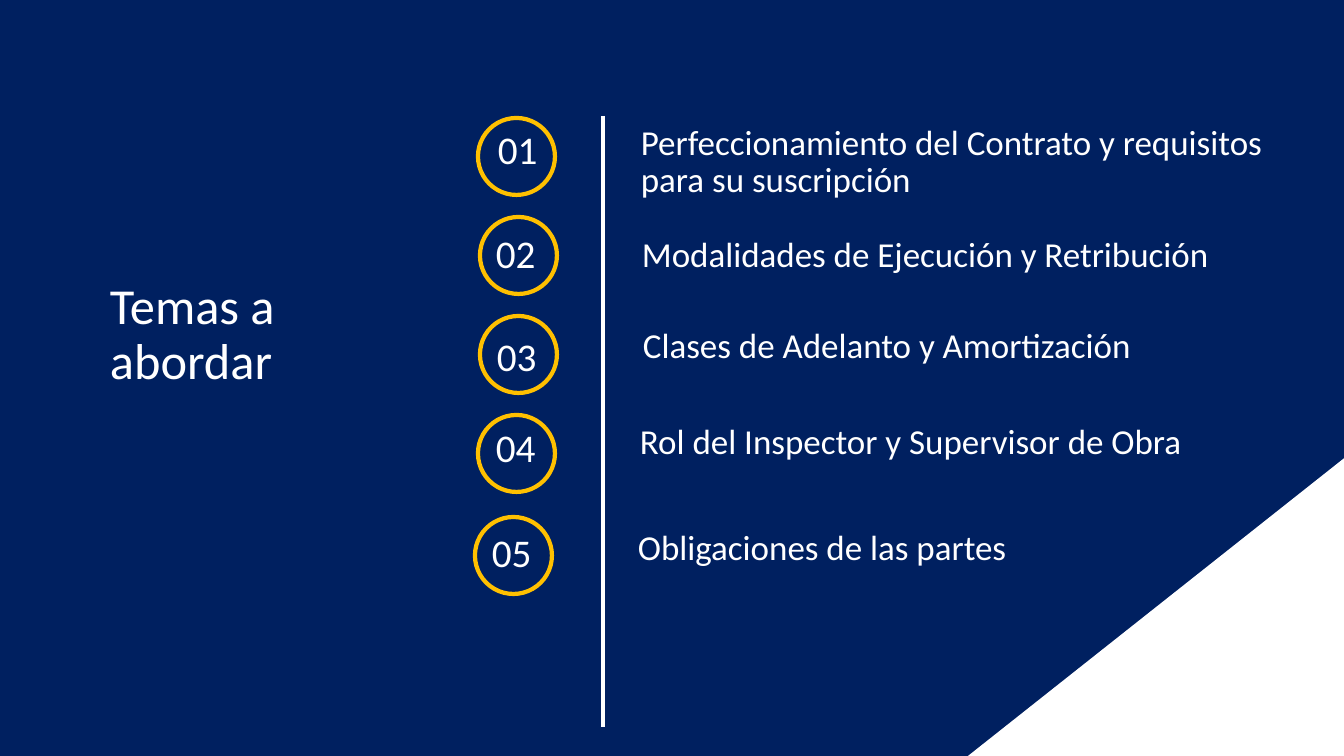
from dataclasses import dataclass

from lxml import etree
from pptx import Presentation
from pptx.dml.color import RGBColor
from pptx.enum.shapes import MSO_CONNECTOR as CONN, MSO_SHAPE as SHAPE
from pptx.enum.text import MSO_ANCHOR as ANCHOR
from pptx.oxml.ns import qn
from pptx.util import Emu, Pt

TITLE = ("Temas a abordar", (100, 318, 343, 77))
TOPICS = [
    dict(text="Perfeccionamiento del Contrato y requisitos para su suscripción",
         box=(631, 120, 673, 59), number=(488, 126), circle=(478, 118)),
    dict(text="Modalidades de Ejecución y Retribución",
         box=(632, 232, 605, 46), number=(486, 230), circle=(480, 217)),
    dict(text="Clases de Adelanto y Amortización",
         box=(633, 323, 518, 56), number=(487, 333), circle=(480, 316)),
    dict(text="Rol del Inspector y Supervisor de Obra",
         box=(630, 419, 578, 56), number=(486, 424), circle=(478, 415)),
    dict(text="Obligaciones de las partes",
         box=(628, 525, 578, 56), number=(482, 529), circle=(475, 517)),
]
NUMBER_SIZE = (60, 59)
CIRCLE_SIZE = (77, 77)
DIVIDER = (603, 116, 603, 727)
CORNER = (968, 456, 758, 300)


@dataclass(frozen=True)
class Theme:
    navy: str = "002060"
    white: str = "FFFFFF"
    gold: str = "FFC000"
    font: str = "Calibri"
    title: int = 36
    number: int = 28
    topic: int = 25
    stroke: int = 3


T = Theme()


def px(*values):
    return [Emu(round(v * 914400 / 100.8)) for v in values]


def rgb(code):
    return RGBColor.from_string(code)


def add_text(s, text, box, size, before=10, anchor=ANCHOR.TOP):
    tf = s.shapes.add_textbox(*px(*box)).text_frame
    tf.word_wrap = True
    tf.vertical_anchor = anchor
    p = tf.paragraphs[0]
    p.line_spacing = 0.9
    p.space_before = Pt(before)
    r = p.add_run()
    r.text = text
    r.font.name = T.font
    r.font.size = Pt(size)
    r.font.color.rgb = rgb(T.white)


def add_shape(s, kind, box, fill=None, line=None):
    sp = s.shapes.add_shape(kind, *px(*box))
    sp.shadow.inherit = False
    if fill:
        sp.fill.solid()
        sp.fill.fore_color.rgb = rgb(fill)
    else:
        sp.fill.background()
    if line:
        sp.line.color.rgb = rgb(line)
        sp.line.width = Pt(T.stroke)
    else:
        sp.line.fill.background()


def add_divider(s):
    cx = s.shapes.add_connector(CONN.STRAIGHT, *px(*DIVIDER))
    cx.line.color.rgb = rgb(T.white)
    cx.line.width = Pt(T.stroke)
    etree.SubElement(cx._element.spPr, qn("a:effectLst"))


def main():
    prs = Presentation()
    prs.slide_width, prs.slide_height = px(1344, 756)
    s = prs.slides.add_slide(prs.slide_layouts[6])
    s.background.fill.solid()
    s.background.fill.fore_color.rgb = rgb(T.navy)

    add_shape(s, SHAPE.ISOSCELES_TRIANGLE, CORNER, fill=T.white)
    add_text(s, *TITLE, T.title, before=0, anchor=ANCHOR.BOTTOM)
    add_divider(s)
    for i, topic in enumerate(TOPICS, 1):
        add_text(s, f"{i:02}", topic["number"] + NUMBER_SIZE, T.number)
        add_shape(s, SHAPE.OVAL, topic["circle"] + CIRCLE_SIZE, line=T.gold)
        add_text(s, topic["text"], topic["box"], T.topic)
    prs.save("out.pptx")


if __name__ == "__main__":
    main()
